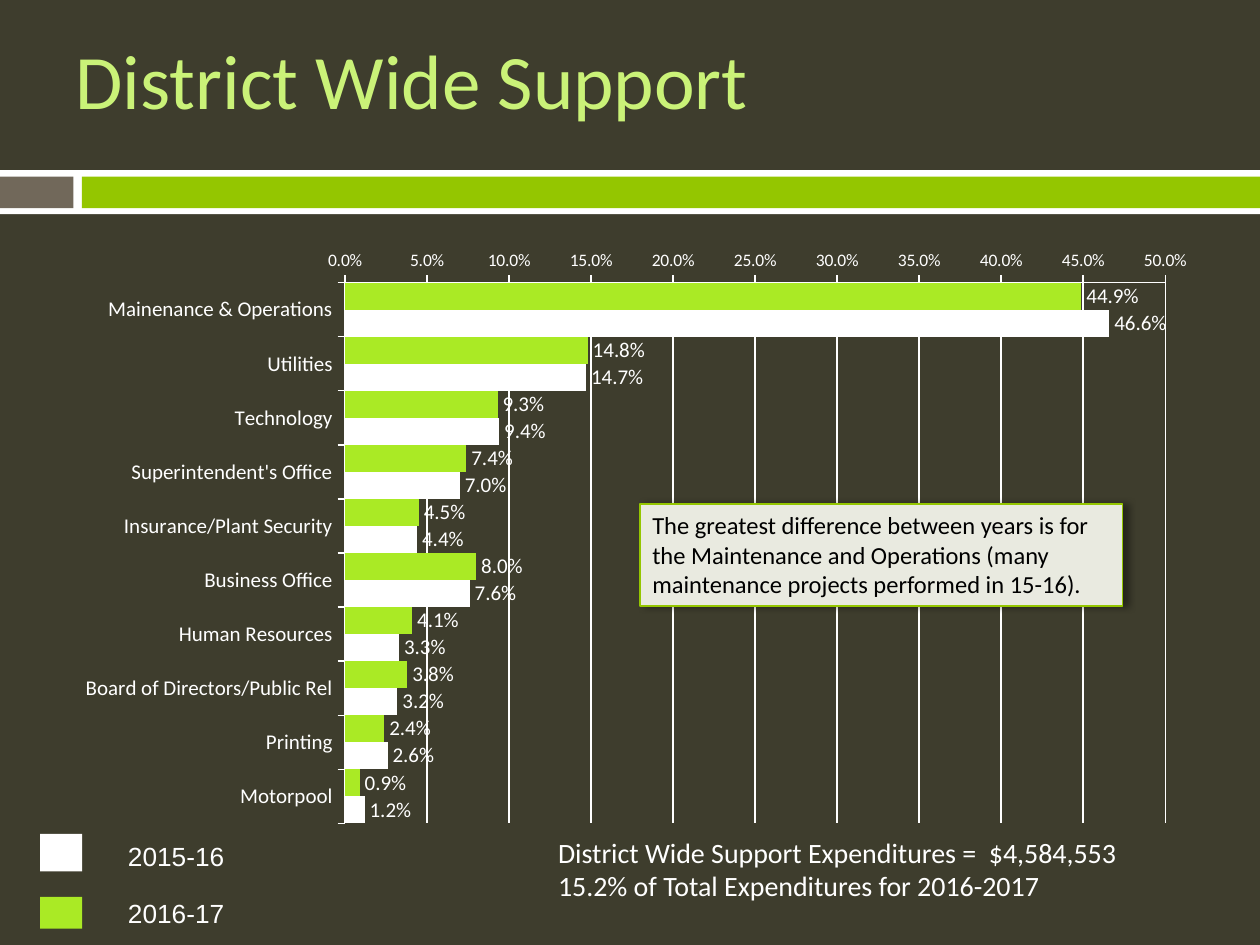
from dataclasses import dataclass

from lxml import etree
from pptx import Presentation
from pptx.chart.data import CategoryChartData
from pptx.dml.color import RGBColor
from pptx.enum.chart import XL_CHART_TYPE, XL_LABEL_POSITION, XL_TICK_MARK
from pptx.enum.shapes import MSO_SHAPE
from pptx.enum.text import MSO_ANCHOR, PP_ALIGN
from pptx.oxml import parse_xml
from pptx.oxml.ns import nsdecls, qn
from pptx.util import Cm, Pt

RECT = MSO_SHAPE.RECTANGLE
BARS = XL_CHART_TYPE.BAR_CLUSTERED
OUTER = XL_LABEL_POSITION.OUTSIDE_END
TICK = XL_TICK_MARK.OUTSIDE
LEFT = PP_ALIGN.LEFT
TOP, MIDDLE = MSO_ANCHOR.TOP, MSO_ANCHOR.MIDDLE


@dataclass
class Theme:
    back: str = "3E3D2D"
    white: str = "FFFFFF"
    black: str = "000000"
    title: str = "CAF278"
    brown: str = "71685A"
    green: str = "94C600"
    lime: str = "AAEA25"
    pale: str = "E9EAE0"
    font: str = "Calibri"
    plain: str = "Arial"
    head: int = 44
    body: int = 16
    key: int = 15
    note: int = 14
    label: int = 12
    scale: int = 10


THEME = Theme()

# Shares of spending: 2016-17, then 2015-16
SHARES = [
    ("Mainenance & Operations", 0.449, 0.466),
    ("Utilities", 0.148, 0.147),
    ("Technology", 0.093, 0.094),
    ("Superintendent's Office", 0.074, 0.07),
    ("Insurance/Plant Security", 0.045, 0.044),
    ("Business Office", 0.08, 0.076),
    ("Human Resources", 0.041, 0.033),
    ("Board of Directors/Public Rel", 0.038, 0.032),
    ("Printing", 0.024, 0.026),
    ("Motorpool", 0.009, 0.012),
]


def color(code):
    return RGBColor.from_string(code)


def style(font, size, code, name=THEME.font):
    font.size, font.name = Pt(size), name
    font.color.rgb = color(code)


def write(frame, text, size, code, name=THEME.font, anchor=TOP):
    """Fill a frame with one paragraph per line of text."""
    frame.word_wrap = True
    frame.vertical_anchor = anchor
    frame.text = text
    for para in frame.paragraphs:
        para.alignment = LEFT
        for run in para.runs:
            style(run.font, size, code, name)


class Page:
    def __init__(self, deck, theme):
        self.theme = theme
        self.slide = deck.slides.add_slide(deck.slide_layouts[5])
        fill = self.slide.background.fill
        fill.solid()
        fill.fore_color.rgb = color(theme.back)

    def title(self, text, *box):
        shape = self.slide.shapes.title
        shape.left, shape.top, shape.width, shape.height = map(Cm, box)
        write(shape.text_frame, text, self.theme.head, self.theme.title,
              anchor=MIDDLE)

    def rect(self, fill, *box, line=None):
        shape = self.slide.shapes.add_shape(RECT, *map(Cm, box))
        shape.shadow.inherit = False
        shape.fill.solid()
        shape.fill.fore_color.rgb = color(fill)
        if line:
            shape.line.color.rgb = color(line)
            shape.line.width = Pt(0.79)
        else:
            shape.line.fill.background()
        return shape

    def text(self, text, *box, **form):
        shape = self.slide.shapes.add_textbox(*map(Cm, box))
        write(shape.text_frame, text, **form)

    def note(self, text, *box):
        t = self.theme
        shape = self.rect(t.pale, *box, line=t.green)
        write(shape.text_frame, text, t.note, t.black)
        # Soft shadow to the right
        glow = shape.element.spPr.find(qn("a:effectLst"))
        shade = etree.SubElement(glow, qn("a:outerShdw"), blurRad=str(Pt(4)),
                                 dist=str(Pt(3)), dir="0", rotWithShape="0")
        tone = etree.SubElement(shade, qn("a:srgbClr"), val=t.black)
        etree.SubElement(tone, qn("a:alpha"), val="40000")

    def chart(self, rows, *box):
        t = self.theme
        names, new, old = zip(*rows)
        data = CategoryChartData(number_format="0.0%")
        data.categories = names
        data.add_series("Series 1", new)
        data.add_series("Series 2", old)
        chart = self.slide.shapes.add_chart(BARS, *map(Cm, box), data).chart
        chart.has_legend = chart.has_title = False
        style(chart.font, 18, t.white)

        # Bars and their labels
        plot = chart.plots[0]
        plot.gap_width, plot.overlap = 0, 0
        plot.vary_by_categories = False
        for series, code in zip(plot.series, (t.lime, t.white)):
            series.format.fill.solid()
            series.format.fill.fore_color.rgb = color(code)
            series.invert_if_negative = False
            labels = series.data_labels
            labels.show_value = True
            labels.position = OUTER
            labels.number_format = "0.0%"
            labels.number_format_is_linked = False
            style(labels.font, t.label, t.white)

        # Axes
        cats, vals = chart.category_axis, chart.value_axis
        cats.reverse_order = True
        vals.minimum_scale, vals.maximum_scale = 0, 0.5
        vals.major_unit = 0.05
        vals.has_major_gridlines = True
        vals.tick_labels.number_format = "0.0%"
        vals.tick_labels.number_format_is_linked = False
        for axis, size in ((cats, t.label), (vals, t.scale)):
            axis.major_tick_mark = TICK
            style(axis.tick_labels.font, size, t.white)
        for part in (cats, vals, vals.major_gridlines):
            part.format.line.color.rgb = color(t.white)
            part.format.line.width = Pt(0.75)

        # Fixed inner plot area
        area = chart.element.find(".//" + qn("c:plotArea"))
        for spare in area.findall(qn("c:layout")):
            area.remove(spare)
        sizes = {"x": 0.232, "y": 0.1, "w": 0.73, "h": 0.872}
        modes = '<c:xMode val="edge"/><c:yMode val="edge"/>'
        items = "".join(f'<c:{k} val="{v}"/>' for k, v in sizes.items())
        area.insert(0, parse_xml(
            f'<c:layout {nsdecls("c")}><c:manualLayout>'
            f'<c:layoutTarget val="inner"/>{modes}{items}'
            '</c:manualLayout></c:layout>'))


def main():
    t = THEME
    deck = Presentation()
    deck.slide_width, deck.slide_height = Cm(25.4), Cm(19.05)
    page = Page(deck, t)

    # Heading and band
    page.rect(t.white, 0, 3.43, 25.4, 0.89)
    page.rect(t.brown, 0, 3.56, 1.48, 0.64)
    page.rect(t.green, 1.65, 3.56, 23.75, 0.64)
    page.title("District Wide Support", 1.27, 0, 22.86, 3.18)

    # Chart and remarks
    page.chart(SHARES, 1.7, 4.45, 22.65, 12.5)
    page.note("The greatest difference between years is for the Maintenance "
              "and Operations (many maintenance projects performed in 15-16).",
              12.9, 10.16, 9.73, 2.06)
    page.text("District Wide Support Expenditures =  $4,584,553\n"
              "15.2% of Total Expenditures for 2016-2017",
              11, 16.71, 12.27, 1.7, size=t.body, code=t.white)

    # Key
    for year, fill, top, high, base in (
            ("2015-16", t.white, 16.81, 0.76, 16.81),
            ("2016-17", t.lime, 18.08, 0.64, 17.96)):
        page.rect(fill, 0.81, top, 0.85, high)
        page.text(year, 2.33, base, 2.54, 0.89,
                  size=t.key, code=t.white, name=t.plain)

    deck.save("out.pptx")


if __name__ == "__main__":
    main()
